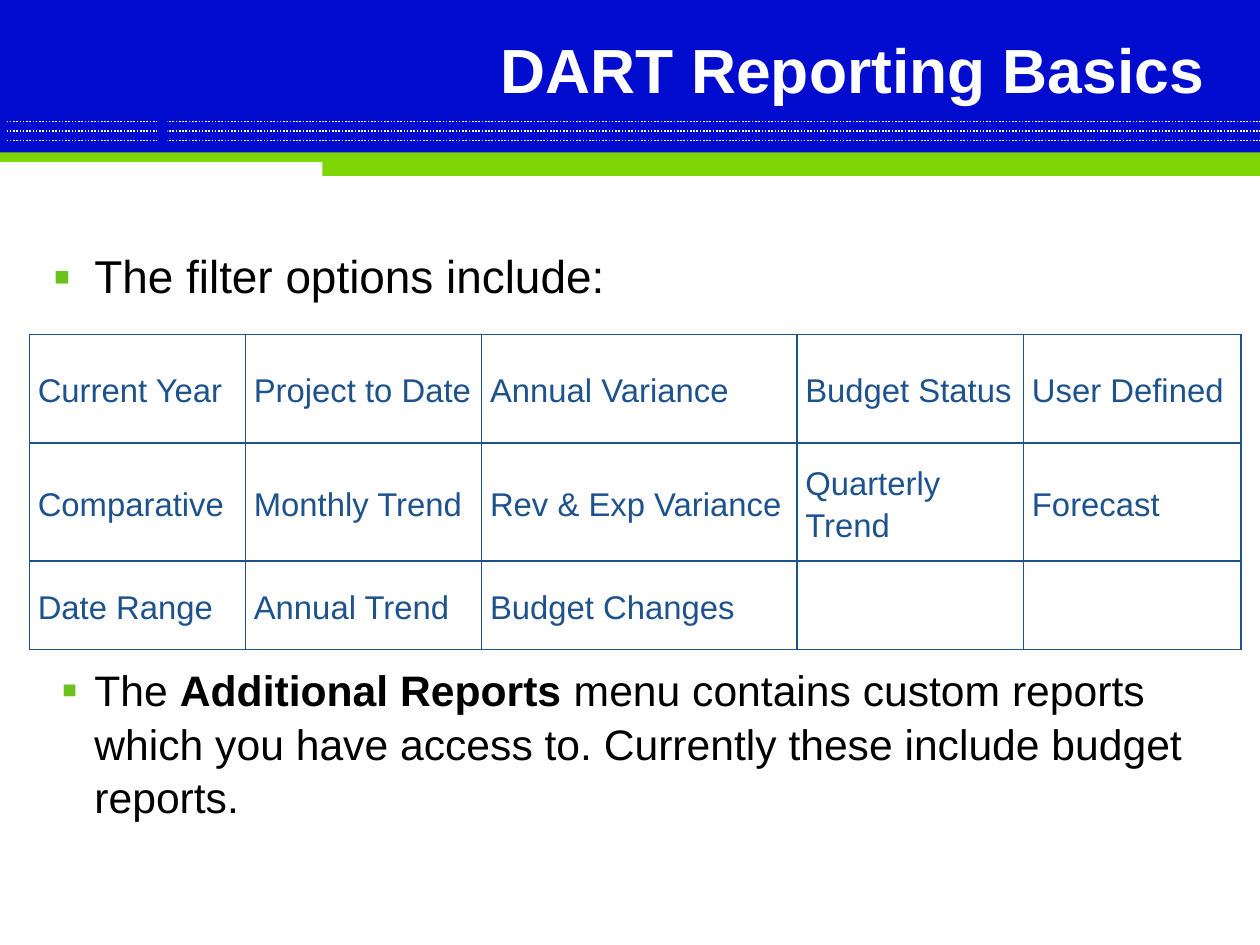
"""Build the DART Reporting Basics slide with its filter options table."""
from lxml import etree
from pptx import Presentation
from pptx.dml.color import RGBColor
from pptx.enum.dml import MSO_LINE
from pptx.enum.shapes import MSO_CONNECTOR, MSO_SHAPE
from pptx.enum.text import MSO_ANCHOR, PP_ALIGN
from pptx.oxml.ns import qn
from pptx.util import Inches, Pt

RECT = MSO_SHAPE.RECTANGLE
STRAIGHT = MSO_CONNECTOR.STRAIGHT
DOTTED = MSO_LINE.ROUND_DOT
MIDDLE = MSO_ANCHOR.MIDDLE
RIGHT = PP_ALIGN.RIGHT

FONT = "Arial"
COLORS = {
    "blue": "020CCE",
    "green": "7DD503",
    "bullet": "6BC21C",
    "table": "1D528D",
    "white": "FFFFFF",
    "black": "000000",
}
WIDTH, HEIGHT = 10.67, 8
COLUMNS = [1.83, 2, 2.67, 1.92, 1.84]
ROWS = [0.92, 1, 0.75]
FILTERS = [
    ["Current Year", "Project to Date", "Annual Variance", "Budget Status", "User Defined"],
    ["Comparative", "Monthly Trend", "Rev & Exp Variance", "Quarterly Trend", "Forecast"],
    ["Date Range", "Annual Trend", "Budget Changes", "", ""],
]


def rgb(name):
    return RGBColor.from_string(COLORS[name])


def add_bar(s, left, top, width, height, color):
    sp = s.shapes.add_shape(RECT, Inches(left), Inches(top), Inches(width), Inches(height))
    sp.shadow.inherit = False
    sp.fill.solid()
    sp.fill.fore_color.rgb = rgb(color)
    sp.line.fill.background()


def add_dotted_line(s, y):
    line = s.shapes.add_connector(STRAIGHT, 0, Inches(y), Inches(WIDTH), Inches(y))
    line.line.color.rgb = rgb("white")
    line.line.width = Pt(1)
    line.line.dash_style = DOTTED
    etree.SubElement(line._element.spPr, qn("a:effectLst"))


def style_font(font, size, color, bold=False):
    font.name = FONT
    font.size = Pt(size)
    font.bold = bold
    font.color.rgb = rgb(color)


def add_text(s, left, top, width, height, runs, size, color):
    box = s.shapes.add_textbox(Inches(left), Inches(top), Inches(width), Inches(height))
    tf = box.text_frame
    tf.word_wrap = True
    tf.margin_left = tf.margin_right = Inches(0.11)
    tf.margin_top = tf.margin_bottom = Inches(0.05)
    p = tf.paragraphs[0]
    for text, bold in runs:
        r = p.add_run()
        r.text = text
        style_font(r.font, size, color, bold)
    return tf


def add_bullet(p, hanging):
    pPr = p._p.get_or_add_pPr()
    pPr.set("marL", str(Inches(0.35)))
    pPr.set("indent", str(-Inches(hanging)))
    color = etree.SubElement(pPr, qn("a:buClr"))
    etree.SubElement(color, qn("a:srgbClr"), val=COLORS["bullet"])
    etree.SubElement(pPr, qn("a:buSzPct"), val="110000")
    etree.SubElement(pPr, qn("a:buFont"), typeface=FONT)
    etree.SubElement(pPr, qn("a:buChar"), char="▪")


def set_borders(cell):
    tcPr = cell._tc.get_or_add_tcPr()
    for i, side in enumerate(("a:lnL", "a:lnR", "a:lnT", "a:lnB")):
        ln = etree.Element(qn(side), w=str(Pt(1)))
        fill = etree.SubElement(ln, qn("a:solidFill"))
        etree.SubElement(fill, qn("a:srgbClr"), val=COLORS["table"])
        tcPr.insert(i, ln)


def fill_cell(cell, text):
    cell.fill.background()
    cell.vertical_anchor = MIDDLE
    cell.margin_left = cell.margin_right = Inches(0.07)
    cell.margin_top = cell.margin_bottom = 0
    set_borders(cell)
    cell.text = text
    p = cell.text_frame.paragraphs[0]
    p.line_spacing = 1.15
    for r in p.runs:
        style_font(r.font, 20, "table")


def add_filter_table(s):
    frame = s.shapes.add_table(len(ROWS), len(COLUMNS), Inches(0.25), Inches(2.83),
                               Inches(sum(COLUMNS)), Inches(sum(ROWS)))
    table = frame.table
    table.first_row = table.horz_banding = False
    for column, width in zip(table.columns, COLUMNS):
        column.width = Inches(width)
    for row, height, texts in zip(table.rows, ROWS, FILTERS):
        row.height = Inches(height)
        for cell, text in zip(row.cells, texts):
            fill_cell(cell, text)


def add_banner(s):
    add_bar(s, 0, 0, WIDTH, 1.33, "blue")
    for i in range(3):
        add_dotted_line(s, 1.03 + i * 0.08)
    add_bar(s, 0, 1.29, WIDTH, 0.08, "green")
    add_bar(s, 2.73, 1.32, WIDTH - 2.73, 0.17, "green")
    add_bar(s, 0, 0, WIDTH, 0.08, "blue")
    for left in (0, 1.33, 1.37):
        add_bar(s, left, 0, 0.05, 1.24, "blue")


def main():
    prs = Presentation()
    prs.slide_width, prs.slide_height = Inches(WIDTH), Inches(HEIGHT)
    s = prs.slides.add_slide(prs.slide_layouts[6])
    add_banner(s)

    title = add_text(s, 2.93, 0.27, 7.38, 0.62, [("DART Reporting Basics", True)], 38, "white")
    title.vertical_anchor = MIDDLE
    title.paragraphs[0].alignment = RIGHT

    intro = add_text(s, 0.34, 2.05, 10.33, 0.6, [("The filter options include:", False)], 28, "black")
    add_bullet(intro.paragraphs[0], 0.35)

    add_filter_table(s)

    runs = [
        ("The ", False),
        ("Additional Reports ", True),
        ("menu contains custom reports which you have access to. "
         "Currently these include budget reports.", False),
    ]
    reports = add_text(s, 0.34, 5.55, 10.33, 1.5, runs, 26, "black")
    add_bullet(reports.paragraphs[0], 0.28)
    reports.paragraphs[0].line_spacing = 1.05

    prs.save("out.pptx")


if __name__ == "__main__":
    main()
